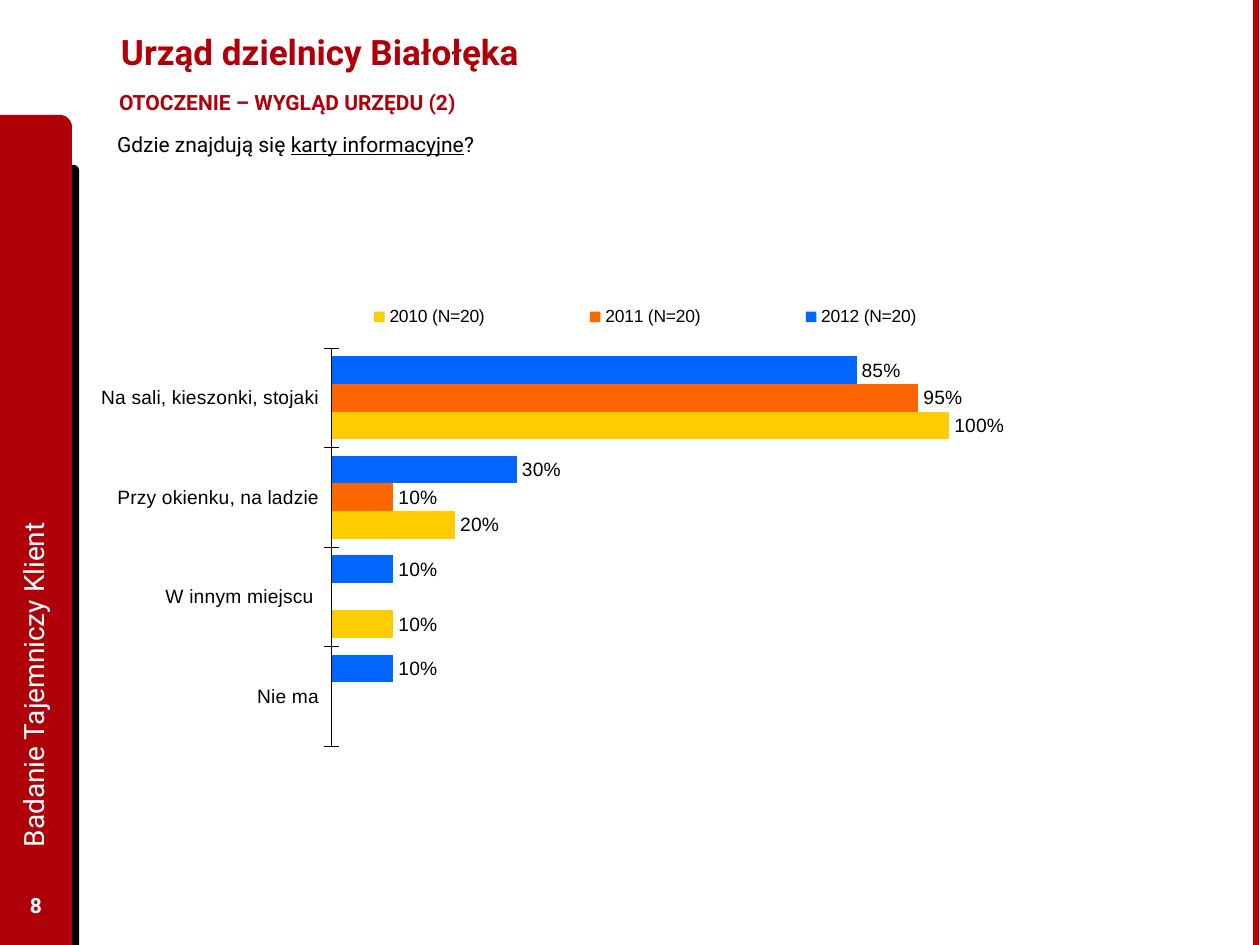
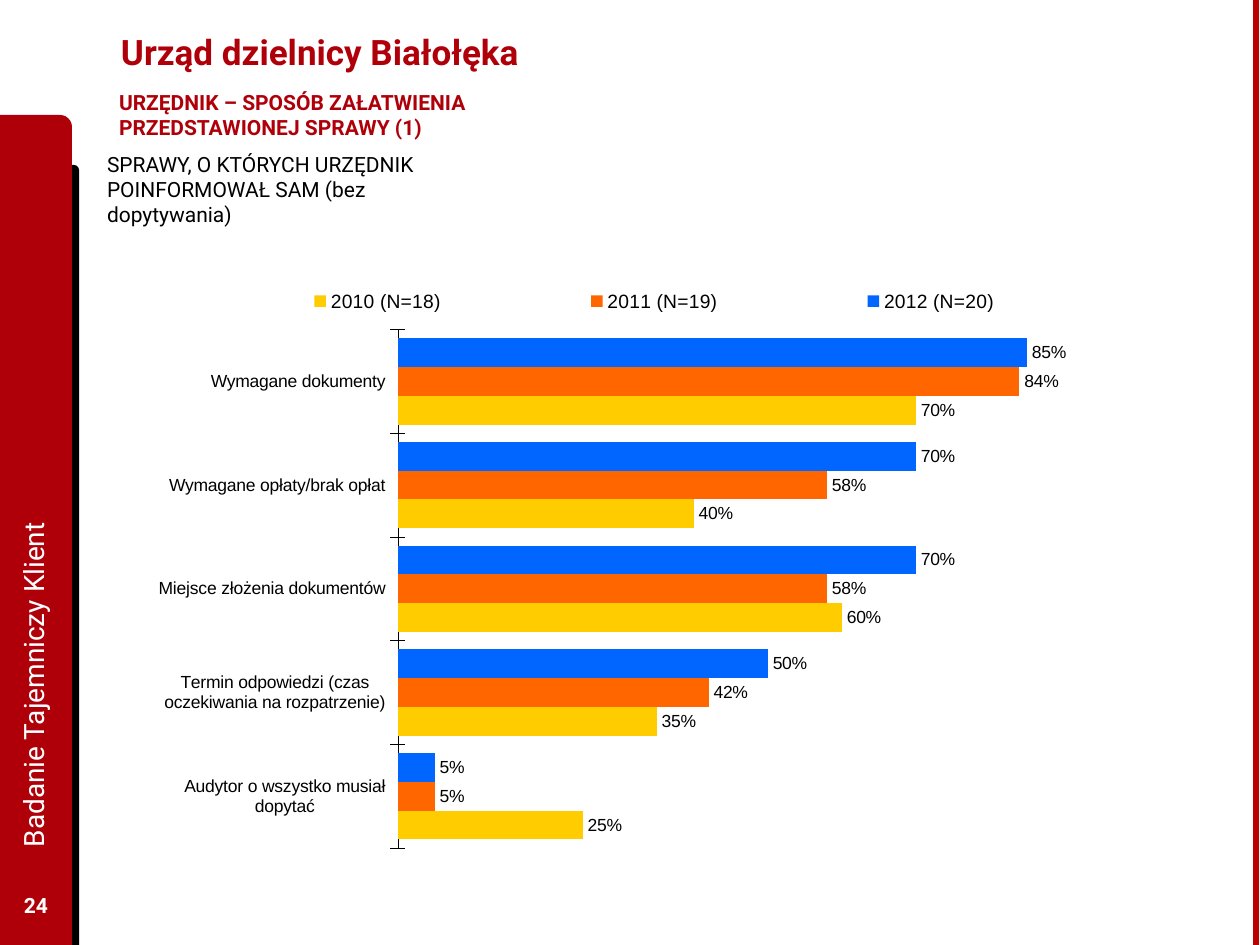
import pptx
import pptx.util
import pptx.chart.data
import pptx.dml.color
import pptx.enum.chart
import pptx.enum.shapes
import pptx.enum.text
import pptx.oxml
import pptx.oxml.ns

PX_PER_INCH = 126
SLIDE_WIDTH, SLIDE_HEIGHT = 1260, 945
COLOURS = {
    "brand": "AF000A",
    "edge": "BD0000",
    "black": "000000",
    "white": "FFFFFF",
    "2012": "0066FF",
    "2011": "FF6600",
    "2010": "FFCC00",
}
TEXT_FONT, CHART_FONT = "Roboto", "Arial"
OFFICE = "Urząd dzielnicy Białołęka"
SURVEY = "Badanie Tajemniczy Klient"


def emu(px):
    return round(px * 914400 / PX_PER_INCH)


def rgb(name):
    return pptx.dml.color.RGBColor.from_string(COLOURS[name])


def style_font(font, name, size, colour, bold=False):
    font.name = name
    font.size = pptx.util.Pt(size)
    font.bold = bold
    font.color.rgb = rgb(colour)


def add_block(slide, kind, box, colour):
    shape = slide.shapes.add_shape(kind, *map(emu, box))
    shape.shadow.inherit = False
    shape.fill.solid()
    shape.fill.fore_color.rgb = rgb(colour)
    shape.line.fill.background()


def add_text(slide, box, runs, size, colour, bold=False, middle=False,
             centred=False, wrap=True, side_inset=13):
    """Add a one-paragraph text box; runs are (text, underlined) pairs."""
    shape = slide.shapes.add_textbox(*map(emu, box))
    frame = shape.text_frame
    frame.word_wrap = wrap
    frame.margin_left = frame.margin_right = emu(side_inset)
    if middle:
        frame.vertical_anchor = pptx.enum.text.MSO_ANCHOR.MIDDLE
    paragraph = frame.paragraphs[0]
    if centred:
        paragraph.alignment = pptx.enum.text.PP_ALIGN.CENTER
    for text, underlined in runs:
        run = paragraph.add_run()
        run.text = text
        style_font(run.font, TEXT_FONT, size, colour, bold)
        if underlined:
            run.font.underline = True
    return shape


def add_side_band(slide, page_number):
    rounded = pptx.enum.shapes.MSO_SHAPE.ROUND_1_RECTANGLE
    rectangle = pptx.enum.shapes.MSO_SHAPE.RECTANGLE
    band_width, band_top, shadow_top = 72, 115, 165
    add_block(slide, rounded, (49, shadow_top, 30, SLIDE_HEIGHT - shadow_top), "black")
    add_block(slide, rounded, (0, band_top, band_width, SLIDE_HEIGHT - band_top), "brand")
    add_block(slide, rectangle, (SLIDE_WIDTH - 7, 0, 6, SLIDE_HEIGHT), "edge")
    add_text(slide, (0, 880, band_width, 50), [(str(page_number), False)],
             12, "white", bold=True, middle=True, centred=True)
    survey_label = add_text(slide, (-330, 465, 726, 64), [(SURVEY, False)],
                            16, "white", middle=True)
    survey_label.rotation = 270


def add_headings(slide, subtitle):
    add_text(slide, (108, 6, 979, 91), [(OFFICE, False)], 20, "brand",
             bold=True, middle=True)
    add_text(slide, (94, 83, 485, 42), [(subtitle, False)], 12, "brand",
             bold=True, wrap=False, side_inset=25)


def manual_layout(x, y, width, height, inner=False):
    """Return a c:layout element; the lengths are fractions of the chart."""
    target = '<c:layoutTarget val="inner"/>' if inner else ""
    return pptx.oxml.parse_xml(
        f'<c:layout {pptx.oxml.ns.nsdecls("c")}><c:manualLayout>{target}'
        '<c:xMode val="edge"/><c:yMode val="edge"/>'
        f'<c:x val="{x}"/><c:y val="{y}"/><c:w val="{width}"/><c:h val="{height}"/>'
        '</c:manualLayout></c:layout>')


def drop_layout(element):
    for layout in element.findall(pptx.oxml.ns.qn("c:layout")):
        element.remove(layout)


def add_year_chart(slide, box, categories, series, plot_box, legend_box,
                   legend_position, label_size, legend_size, axis_max=None):
    """Add a bar chart with one series, given as (year, sample, values), a year."""
    data = pptx.chart.data.CategoryChartData(number_format="0%")
    data.categories = categories
    for year, sample, values in series:
        data.add_series(f"{year} (N={sample})", values)
    chart = slide.shapes.add_chart(
        pptx.enum.chart.XL_CHART_TYPE.BAR_CLUSTERED, *map(emu, box), data).chart
    chart.has_title = False
    style_font(chart.font, CHART_FONT, label_size, "black")

    plot = chart.plots[0]
    plot.gap_width = 60
    plot.vary_by_categories = False
    for bars, (year, _, _) in zip(plot.series, series):
        bars.format.fill.solid()
        bars.format.fill.fore_color.rgb = rgb(year)
        bars.invert_if_negative = False
        labels = bars.data_labels
        labels.show_value = True
        labels.number_format = "0%"
        labels.number_format_is_linked = False
        labels.position = pptx.enum.chart.XL_LABEL_POSITION.OUTSIDE_END
        style_font(labels.font, CHART_FONT, label_size, "black")

    category_axis = chart.category_axis
    category_axis.reverse_order = True
    category_axis.major_tick_mark = pptx.enum.chart.XL_TICK_MARK.CROSS
    category_axis.format.line.color.rgb = rgb("black")
    category_axis.format.line.width = pptx.util.Pt(0.25)
    style_font(category_axis.tick_labels.font, CHART_FONT, label_size, "black")

    value_axis = chart.value_axis
    value_axis.has_major_gridlines = False
    value_axis.minimum_scale = 0
    if axis_max:
        value_axis.maximum_scale = axis_max
        value_axis.major_unit = 0.2
    value_axis.visible = False

    chart.has_legend = True
    legend = chart.legend
    legend.position = legend_position
    legend.include_in_layout = False
    style_font(legend.font, CHART_FONT, legend_size, "black")

    legend_element = legend._element
    drop_layout(legend_element)
    legend_element.find(pptx.oxml.ns.qn("c:legendPos")).addnext(manual_layout(*legend_box))
    plot_area = chart._chartSpace.chart.plotArea
    drop_layout(plot_area)
    plot_area.insert(0, manual_layout(*plot_box, inner=True))


def add_survey_slide(presentation, page_number, subtitle, question, question_box, chart):
    slide = presentation.slides.add_slide(presentation.slide_layouts[6])
    add_side_band(slide, page_number)
    add_headings(slide, subtitle)
    add_text(slide, question_box, question, 12, "black")
    add_year_chart(slide, **chart)


def main():
    presentation = pptx.Presentation()
    presentation.slide_width = emu(SLIDE_WIDTH)
    presentation.slide_height = emu(SLIDE_HEIGHT)
    positions = pptx.enum.chart.XL_LEGEND_POSITION

    add_survey_slide(
        presentation, 8, "OTOCZENIE – WYGLĄD URZĘDU (2)",
        [("Gdzie znajdują się ", False), ("karty informacyjne", True), ("?", False)],
        (104, 125, 775, 38),
        dict(
            box=(101, 299, 1143, 447),
            categories=["Na sali, kieszonki, stojaki", "Przy okienku, na ladzie",
                        "W innym miejscu ", "Nie ma"],
            series=[("2012", 20, (0.85, 0.3, 0.1, 0.1)),
                    ("2011", 20, (0.95, 0.1, None, None)),
                    ("2010", 20, (1, 0.2, 0.1, None))],
            plot_box=(0.2, 0.11, 0.65, 0.89),
            legend_box=(0.15, 0.01, 0.65, 0.06),
            legend_position=positions.TOP,
            label_size=11, legend_size=10))

    add_survey_slide(
        presentation, 24, "URZĘDNIK – SPOSÓB ZAŁATWIENIA PRZEDSTAWIONEJ SPRAWY (1)",
        [("SPRAWY, O KTÓRYCH URZĘDNIK POINFORMOWAŁ SAM (bez dopytywania)", False)],
        (94, 145, 407, 89),
        dict(
            box=(151, 284, 987, 570),
            categories=["Wymagane dokumenty", "Wymagane opłaty/brak opłat",
                        "Miejsce złożenia dokumentów",
                        "Termin odpowiedzi (czas oczekiwania na rozpatrzenie)",
                        "Audytor o wszystko musiał dopytać"],
            series=[("2012", 20, (0.85, 0.7, 0.7, 0.5, 0.05)),
                    ("2011", 19, (0.84, 0.58, 0.58, 0.42, 0.05)),
                    ("2010", 18, (0.7, 0.4, 0.6, 0.35, 0.25))],
            plot_box=(0.25, 0.08, 0.75, 0.91),
            legend_box=(0.02, 0, 0.98, 0.06),
            legend_position=positions.RIGHT,
            label_size=10, legend_size=11, axis_max=1))

    presentation.save("out.pptx")


if __name__ == "__main__":
    main()
